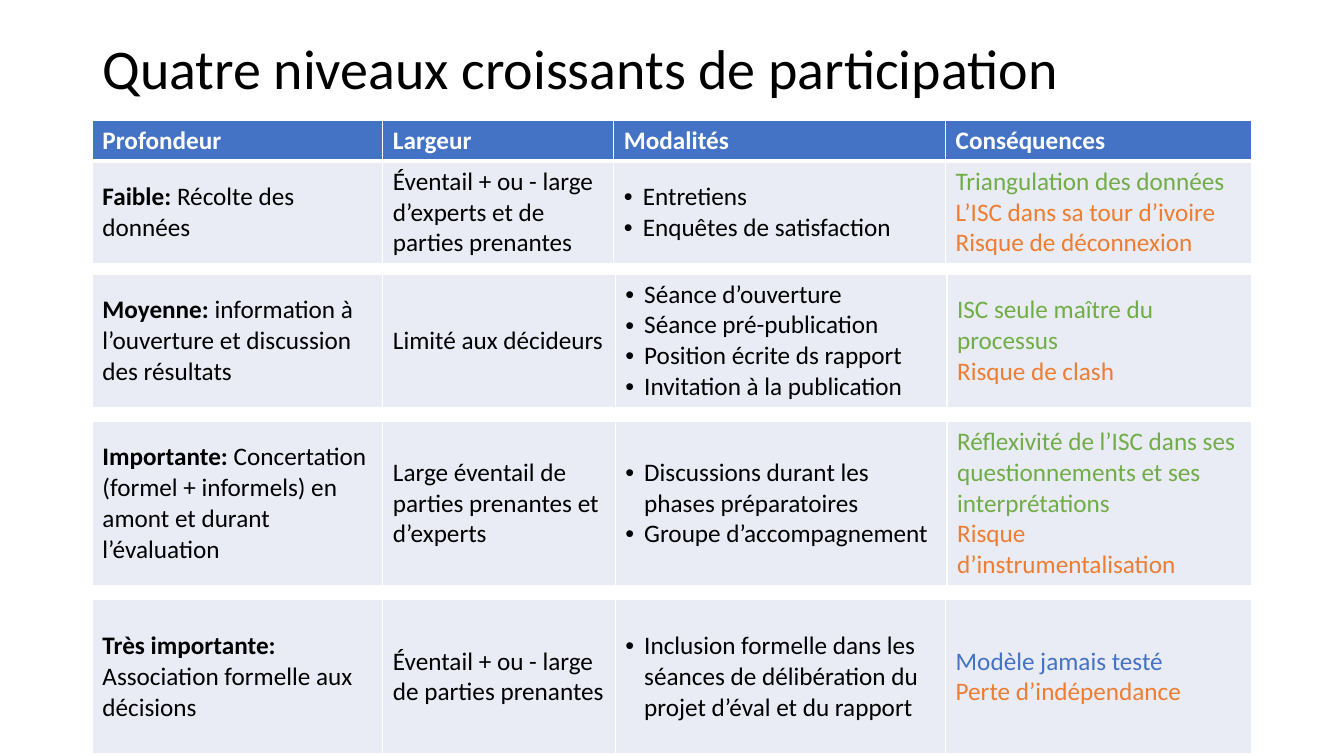
"""Build the slide on four rising levels of participation."""
import dataclasses

import lxml.etree
import pptx
import pptx.dml.color
import pptx.enum.text
import pptx.oxml.ns
import pptx.util

Pt = pptx.util.Pt
qn = pptx.oxml.ns.qn
MIDDLE = pptx.enum.text.MSO_ANCHOR.MIDDLE


@dataclasses.dataclass(frozen=True)
class Theme:
    font: str = "Calibri"
    title_size: float = 40
    body_size: float = 18
    black: str = "000000"
    white: str = "FFFFFF"
    blue: str = "4472C4"
    band: str = "E9EBF5"
    green: str = "70AD47"
    orange: str = "ED7D31"


class Deck:
    def __init__(self, theme, width, height):
        self.theme = theme
        self.prs = pptx.Presentation()
        self.prs.slide_width, self.prs.slide_height = Pt(width), Pt(height)
        self.slide = self.prs.slides.add_slide(self.prs.slide_layouts[5])

    def run(self, p, text, color, bold=False, size=None):
        r = p.add_run()
        r.text = text
        values = {"name": self.theme.font, "size": Pt(size or self.theme.body_size), "bold": bold}
        for key, value in values.items():
            setattr(r.font, key, value)
        r.font.color.rgb = pptx.dml.color.RGBColor.from_string(color)

    def title(self, text, left, top, width, height):
        sp = self.slide.shapes.title
        box = {"left": left, "top": top, "width": width, "height": height}
        for key, value in box.items():
            setattr(sp, key, Pt(value))
        tf = sp.text_frame
        for key, value in {"word_wrap": True, "vertical_anchor": MIDDLE}.items():
            setattr(tf, key, value)
        p = tf.paragraphs[0]
        for key, value in {"alignment": pptx.enum.text.PP_ALIGN.LEFT, "line_spacing": 0.9}.items():
            setattr(p, key, value)
        self.run(p, text, self.theme.black, size=self.theme.title_size)

    def bullet(self, p, indent=13.5):
        pPr = p._p.get_or_add_pPr()
        pPr.set("marL", str(Pt(indent)))
        pPr.set("indent", str(Pt(-indent)))
        lxml.etree.SubElement(pPr, qn("a:buFont")).set("typeface", "Arial")
        lxml.etree.SubElement(pPr, qn("a:buChar")).set("char", "•")

    def borders(self, cell, bottom):
        tcPr = cell._tc.get_or_add_tcPr()
        for side, weight in {"L": 1, "R": 1, "T": 1, "B": bottom}.items():
            ln = lxml.etree.SubElement(tcPr, qn(f"a:ln{side}"), w=str(Pt(weight)))
            fill = lxml.etree.SubElement(ln, qn("a:solidFill"))
            lxml.etree.SubElement(fill, qn("a:srgbClr")).set("val", self.theme.white)

    def cell(self, cell, paragraphs, fill, bulleted=False, bottom=1):
        self.borders(cell, bottom)
        cell.fill.solid()
        cell.fill.fore_color.rgb = pptx.dml.color.RGBColor.from_string(fill)
        tf = cell.text_frame
        for i, runs in enumerate(paragraphs):
            p = tf.paragraphs[0] if i == 0 else tf.add_paragraph()
            if bulleted:
                self.bullet(p)
            for values in runs:
                self.run(p, *values)

    def table(self, left, top, widths, height, level, header=None, header_height=29.5):
        heights = [header_height, height] if header else [height]
        frame = self.slide.shapes.add_table(
            len(heights), len(widths), Pt(left), Pt(top), Pt(sum(widths)), Pt(sum(heights)))
        table = frame.table
        table.first_row, table.horz_banding = bool(header), False
        for column, width in zip(table.columns, widths):
            column.width = Pt(width)
        for row, row_height in zip(table.rows, heights):
            row.height = Pt(row_height)
        for i, text in enumerate(header or []):
            self.cell(table.cell(0, i), [[(text, self.theme.white, True)]], self.theme.blue, bottom=3)
        for i, paragraphs in enumerate(level):
            cell = table.cell(len(heights) - 1, i)
            cell.vertical_anchor = MIDDLE
            self.cell(cell, paragraphs, self.theme.band, bulleted=i == 2)


def level(theme, name, depth, breadth, methods, effects):
    return [
        [[(f"{name} ", theme.black, True), (depth, theme.black)]],
        [[(breadth, theme.black)]],
        [[(method, theme.black)] for method in methods],
        [[effect] for effect in effects],
    ]


def main():
    theme = Theme()
    deck = Deck(theme, 960, 540)
    left = 66
    deck.title("Quatre niveaux croissants de participation", left, 28.8, 828, 44.6)
    header = ["Profondeur", "Largeur", "Modalités", "Conséquences"]
    wide, narrow = (207.5, 165, 237, 218.5), (207.5, 166, 237, 217.5)
    levels = [
        (85.7, wide, 72, level(
            theme, "Faible:", "Récolte des données",
            "Éventail + ou - large d’experts et de parties prenantes",
            ["Entretiens", "Enquêtes de satisfaction"],
            [("Triangulation des données", theme.green),
             ("L’ISC dans sa tour d’ivoire Risque de déconnexion", theme.orange)]), header),
        (195.8, narrow, 93.6, level(
            theme, "Moyenne:", "information à l’ouverture et discussion des résultats",
            "Limité aux décideurs",
            ["Séance d’ouverture", "Séance pré-publication",
             "Position écrite ds rapport", "Invitation à la publication"],
            [("ISC seule maître du processus", theme.green),
             ("Risque de clash", theme.orange)]), None),
        (301, narrow, 115.2, level(
            theme, "Importante:", "Concertation (formel + informels) en amont et durant l’évaluation",
            "Large éventail de parties prenantes et d’experts",
            ["Discussions durant les phases préparatoires", "Groupe d’accompagnement"],
            [("Réflexivité de l’ISC dans ses questionnements et ses interprétations", theme.green),
             ("Risque d’instrumentalisation", theme.orange)]), None),
        (428.4, (207.5, 166, 236, 218.5), 110.2, level(
            theme, "Très importante:", "Association formelle aux décisions",
            "Éventail + ou - large de parties prenantes",
            ["Inclusion formelle dans les séances de délibération du projet d’éval et du rapport"],
            [("Modèle jamais testé", theme.blue),
             ("Perte d’indépendance", theme.orange)]), None),
    ]
    for top, widths, height, cells, heading in levels:
        deck.table(left, top, widths, height, cells, heading)
    deck.prs.save("out.pptx")


if __name__ == "__main__":
    main()
